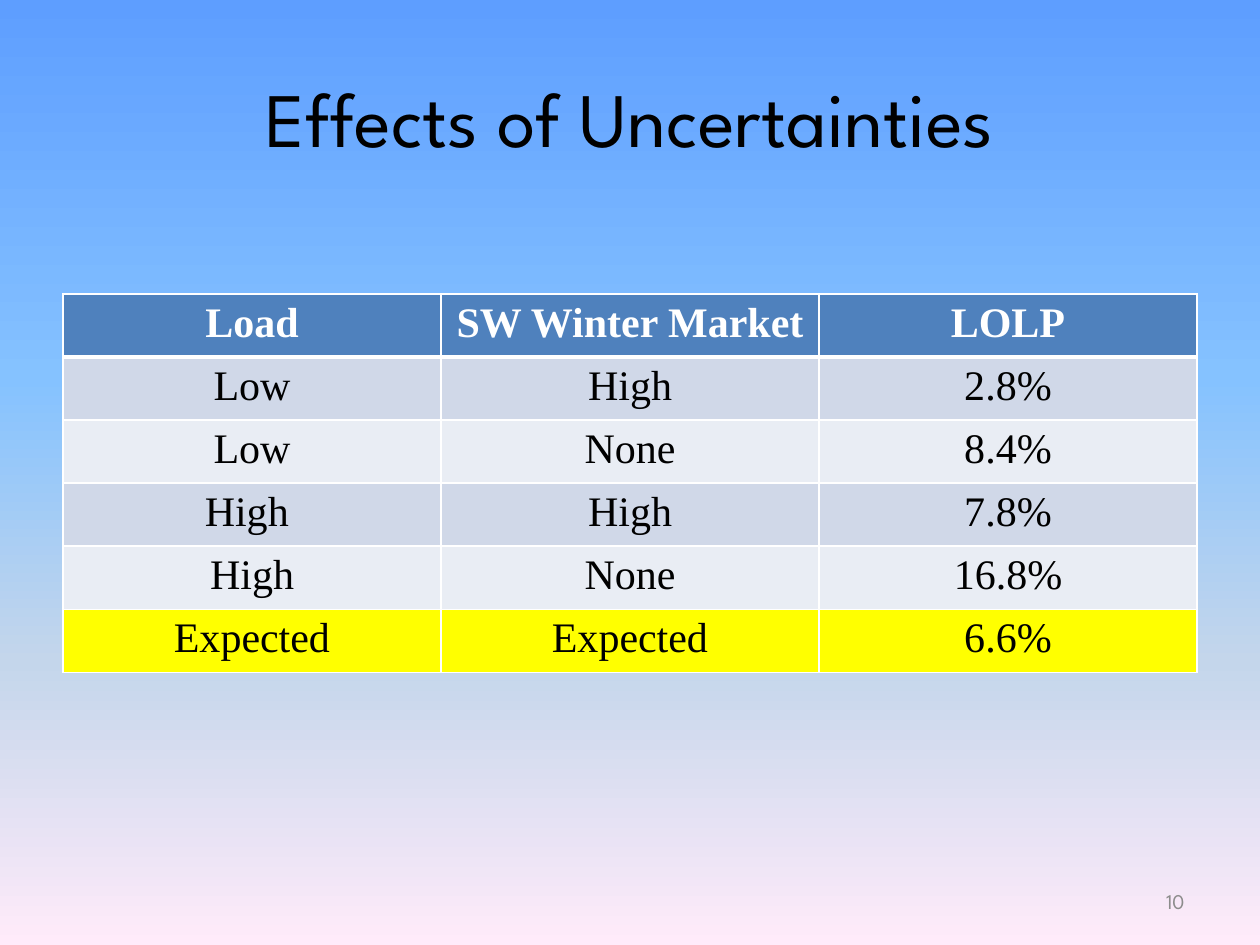
import pptx
import pptx.util
import pptx.dml.color
import pptx.enum.text
import pptx.oxml
import pptx.oxml.ns

Pt = pptx.util.Pt
ALIGN = pptx.enum.text.PP_ALIGN
MIDDLE = pptx.enum.text.MSO_ANCHOR.MIDDLE

COLORS = {
    "black": "000000", "white": "FFFFFF", "gray": "8C8C8C",
    "header": "4F81BD", "band": "D0D8E8", "light": "E9EDF4", "highlight": "FFFF00",
}
SKY = [(0, "5E9EFF"), (40, "85C2FF"), (70, "C4D6EB"), (100, "FFEBFA")]
HEADING_FONT = "League Spartan"
TABLE_FONT = "Times New Roman"
ROWS = [
    ("Load", "SW Winter Market", "LOLP"),
    ("Low", "High", "2.8%"),
    ("Low", "None", "8.4%"),
    ("High ", "High", "7.8%"),
    ("High", "None", "16.8%"),
    ("Expected", "Expected", "6.6%"),
]


def rgb(name):
    """Return the named colour."""
    return pptx.dml.color.RGBColor.from_string(COLORS[name])


def write_text(tf, text, font=HEADING_FONT, size=12, color="black", bold=False, align=ALIGN.CENTER):
    """Write one formatted paragraph into a text frame."""
    p = tf.paragraphs[0]
    p.alignment = align
    r = p.add_run()
    r.text = text
    r.font.name, r.font.size, r.font.bold = font, Pt(size), bold
    r.font.color.rgb = rgb(color)


def add_label(s, box, text, **fmt):
    """Add a wrapped, vertically centred text box."""
    tf = s.shapes.add_textbox(*map(Pt, box)).text_frame
    tf.word_wrap = True
    tf.vertical_anchor = MIDDLE
    write_text(tf, text, **fmt)


def paint_background(s):
    """Fill the background with a vertical sky gradient."""
    fill = s.background.fill
    fill.gradient()
    fill.gradient_angle = 270
    stops = s.element.xpath(".//a:gsLst")[0]
    for gs in list(stops):
        stops.remove(gs)
    for pos, color in SKY:
        stops.append(pptx.oxml.parse_xml(
            f'<a:gs {pptx.oxml.ns.nsdecls("a")} pos="{pos * 1000}">'
            f'<a:srgbClr val="{color}"/></a:gs>'))


def set_borders(cell, top=1, bottom=1):
    """Draw white borders around a cell."""
    tcPr = cell._tc.get_or_add_tcPr()
    for side, width in (("L", 1), ("R", 1), ("T", top), ("B", bottom)):
        tcPr.append(pptx.oxml.parse_xml(
            f'<a:ln{side} {pptx.oxml.ns.nsdecls("a")} w="{Pt(width)}"><a:solidFill>'
            f'<a:srgbClr val="{COLORS["white"]}"/></a:solidFill></a:ln{side}>'))


def row_fill(i):
    """Choose the fill of a row by its place in the table."""
    if i == 0:
        return "header"
    if i == len(ROWS) - 1:
        return "highlight"
    return "band" if i % 2 else "light"


def add_results_table(s, box):
    """Add the table of load and market cases."""
    table = s.shapes.add_table(len(ROWS), len(ROWS[0]), *map(Pt, box)).table
    for i, row in enumerate(ROWS):
        for j, text in enumerate(row):
            cell = table.cell(i, j)
            set_borders(cell, top=3 if i == 1 else 1, bottom=3 if i == 0 else 1)
            cell.fill.solid()
            cell.fill.fore_color.rgb = rgb(row_fill(i))
            write_text(cell.text_frame, text, font=TABLE_FONT, size=24,
                       color="black" if i else "white", bold=i == 0)


def main():
    """Build and save the slide."""
    prs = pptx.Presentation()
    prs.slide_width, prs.slide_height = Pt(720), Pt(540)
    s = prs.slides.add_slide(prs.slide_layouts[6])
    paint_background(s)
    add_label(s, (36, 21.6, 648, 90), "Effects of Uncertainties", size=44)
    add_label(s, (516, 500.5, 168, 28.75), "10", color="gray", align=ALIGN.RIGHT)
    add_results_table(s, (36, 168, 648, 175.2))
    prs.save("out.pptx")


if __name__ == "__main__":
    main()
